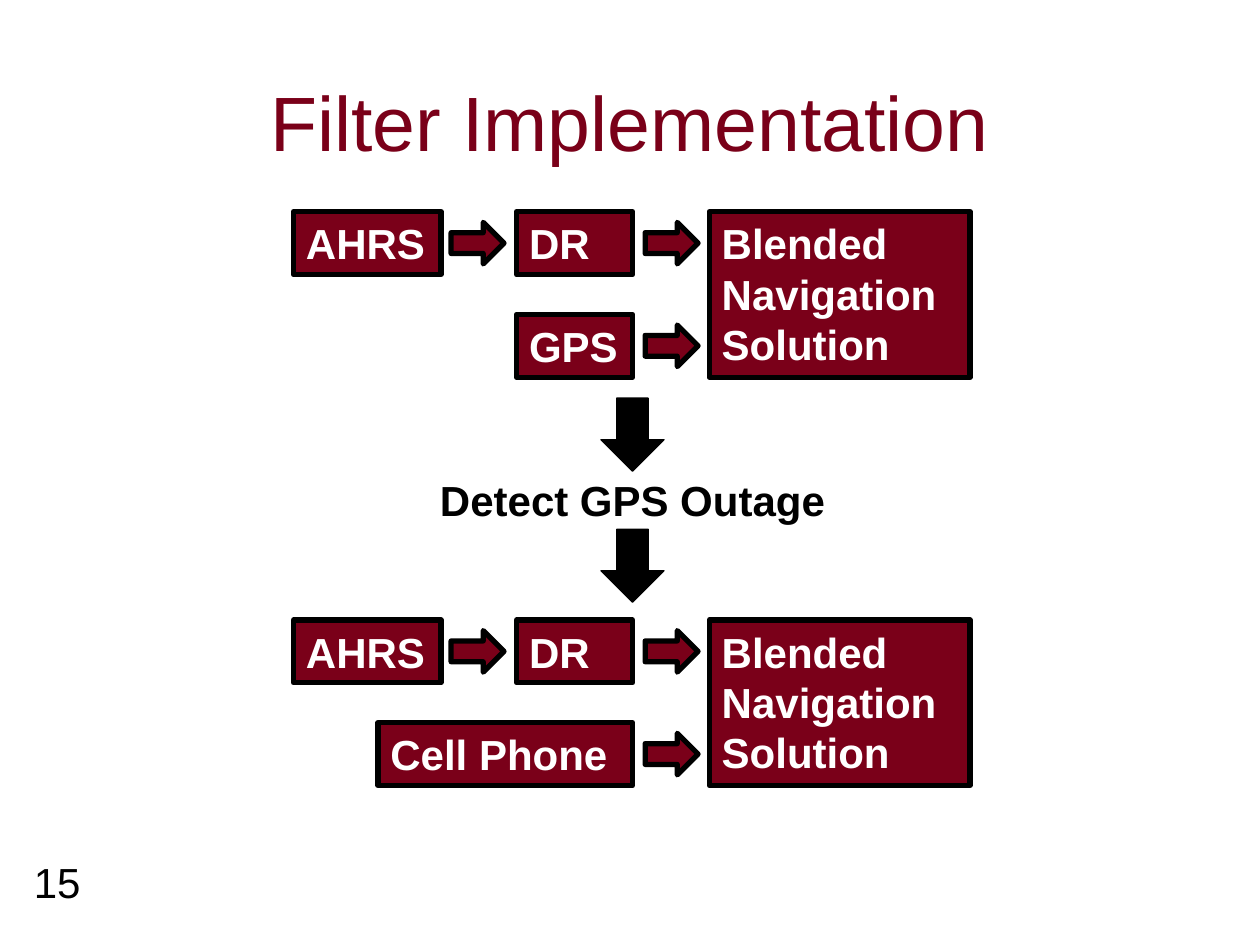
from pptx import Presentation
from pptx import util as u
from pptx.dml.color import RGBColor
from pptx.enum import shapes, text

COLORS = {"maroon": "7A0019", "black": "000000", "white": "FFFFFF"}
FONT = "Arial"
BOX_HEIGHT = 0.5
ROW_STEP = 0.815
ARROW_WIDTH, ARROW_HEIGHT = 0.42, 0.33
SENSOR_ARROW_LEFT, SOLUTION_ARROW_LEFT = 3.58, 5.12
SOURCE_RIGHT = 5.02
CENTER = 5.02


def rgb(name):
    return RGBColor.from_string(COLORS[name])


def inches(*lengths):
    return [u.Inches(length) for length in lengths]


def write(frame, lines, color, size=24, bold=False, align=text.PP_ALIGN.LEFT,
          anchor=text.MSO_ANCHOR.TOP):
    frame.word_wrap = True
    frame.vertical_anchor = anchor
    frame.text = "\n".join(lines)
    for paragraph in frame.paragraphs:
        paragraph.alignment = align
        paragraph.font.name = FONT
        paragraph.font.size = u.Pt(size)
        paragraph.font.bold = bold
        paragraph.font.color.rgb = rgb(color)


def add_label(slide, area, line, **style):
    label = slide.shapes.add_textbox(*inches(*area))
    write(label.text_frame, [line], "black", **style)


def add_solid(slide, preset, area, fill="maroon", line_width=3):
    solid = slide.shapes.add_shape(preset, *inches(*area))
    solid.shadow.inherit = False
    solid.fill.solid()
    solid.fill.fore_color.rgb = rgb(fill)
    solid.line.color.rgb = rgb("black")
    solid.line.width = u.Pt(line_width)
    return solid


def add_box(slide, area, *lines):
    box = add_solid(slide, shapes.MSO_SHAPE.RECTANGLE, area)
    write(box.text_frame, lines, "white", bold=True)


def add_flow_arrow(slide, left, row_top):
    top = row_top + (BOX_HEIGHT - ARROW_HEIGHT) / 2
    add_solid(slide, shapes.MSO_SHAPE.RIGHT_ARROW,
              (left, top, ARROW_WIDTH, ARROW_HEIGHT))


def add_step_arrow(slide, top, width=0.5, height=0.58):
    add_solid(slide, shapes.MSO_SHAPE.DOWN_ARROW,
              (CENTER - width / 2, top, width, height), "black", 0.75)


def add_filter(slide, top, aiding_source, aiding_width):
    """Dead reckoning and an aiding source, blended into one solution."""
    second_row = top + ROW_STEP
    dr_width = 0.92
    add_box(slide, (2.33, top, 1.17, BOX_HEIGHT), "AHRS")
    add_box(slide, (SOURCE_RIGHT - dr_width, top, dr_width, BOX_HEIGHT), "DR")
    add_box(slide, (SOURCE_RIGHT - aiding_width, second_row, aiding_width,
                    BOX_HEIGHT), aiding_source)
    add_box(slide, (5.63, top, 2.07, ROW_STEP + BOX_HEIGHT),
            "Blended", "Navigation Solution")
    add_flow_arrow(slide, SENSOR_ARROW_LEFT, top)
    for row_top in (top, second_row):
        add_flow_arrow(slide, SOLUTION_ARROW_LEFT, row_top)


def add_title(slide, line):
    title = slide.shapes.title
    title.left, title.top, title.width, title.height = inches(0.75, 0.33, 8.5, 1.25)
    write(title.text_frame, [line], "maroon", size=44,
          align=text.PP_ALIGN.CENTER, anchor=text.MSO_ANCHOR.MIDDLE)


def main():
    deck = Presentation()
    deck.slide_width, deck.slide_height = inches(10, 7.5)
    slide = deck.slides.add_slide(deck.slide_layouts[5])

    add_title(slide, "Filter Implementation")
    add_filter(slide, 1.68, "GPS", 0.92)
    add_label(slide, (CENTER - 1.75, 3.72, 3.5, 0.5), "Detect GPS Outage",
              bold=True, align=text.PP_ALIGN.CENTER)
    for top in (3.16, 4.2):
        add_step_arrow(slide, top)
    add_filter(slide, 4.92, "Cell Phone", 2.02)
    add_label(slide, (0.17, 6.75, 1.83, 0.5), "15")

    deck.save("out.pptx")


if __name__ == "__main__":
    main()
